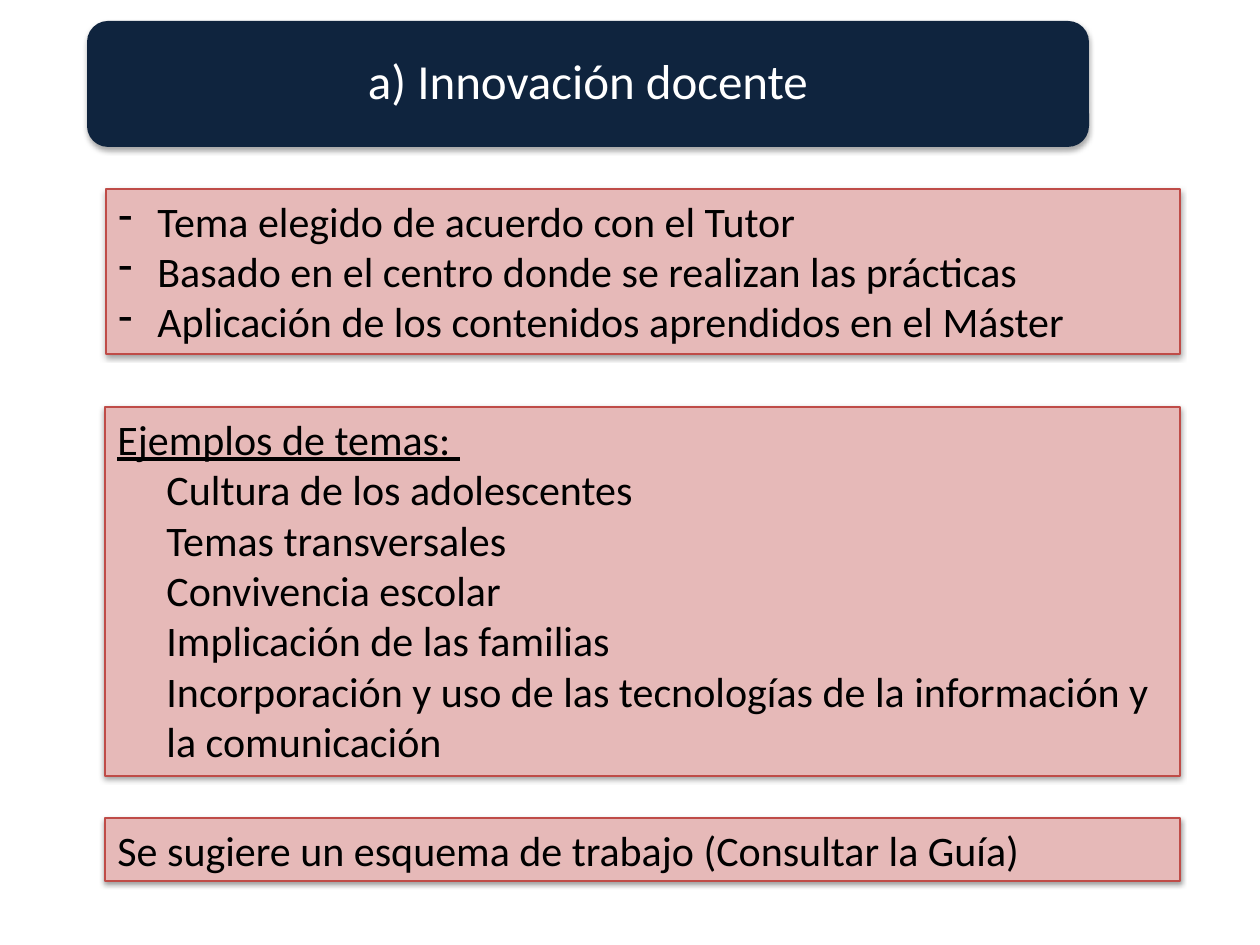
from lxml import etree
from pptx import Presentation
from pptx.dml.color import RGBColor
from pptx.enum import shapes, text
from pptx.oxml import ns
from pptx.util import Pt

SCALE = 914400 / 126
COLORS = {"navy": "0F243E", "pink": "E6B9B8", "red": "BF4C48",
          "black": "000000", "white": "FFFFFF"}


def add_panel(kind, left, top, width, height, fill, shadow_alpha, shadow_distance):
    box = page.shapes.add_shape(kind, *(round(side * SCALE) for side in (left, top, width, height)))
    box.fill.solid()
    box.fill.fore_color.rgb = RGBColor.from_string(COLORS[fill])
    box.shadow.inherit = False
    effects = box._element.spPr.find(ns.qn("a:effectLst"))
    shadow = etree.SubElement(effects, ns.qn("a:outerShdw"), blurRad="40000",
                              dist=str(shadow_distance), dir="5400000", rotWithShape="0")
    color = etree.SubElement(shadow, ns.qn("a:srgbClr"), val=COLORS["black"])
    etree.SubElement(color, ns.qn("a:alpha"), val=str(shadow_alpha * 1000))
    box.text_frame.word_wrap = True
    return box


def add_span(para, words, size, color):
    span = para.add_run()
    span.text = words
    span.font.name = "Calibri"
    span.font.size = Pt(size)
    span.font.color.rgb = RGBColor.from_string(COLORS[color])
    return span


deck = Presentation()
deck.slide_width = round(1260 * SCALE)
deck.slide_height = round(945 * SCALE)
page = deck.slides.add_slide(deck.slide_layouts[6])

panels = [
    (106, 189, 1074, 165, [
        ("Tema elegido de acuerdo con el Tutor", "dash"),
        ("Basado en el centro donde se realizan las prácticas", "dash"),
        ("Aplicación de los contenidos aprendidos en el Máster", "dash"),
    ]),
    (105, 407, 1075, 369, [
        ("Ejemplos de temas: ", "heading"),
        ("Cultura de los adolescentes", "indent"),
        ("Temas transversales", "indent"),
        ("Convivencia escolar", "indent"),
        ("Implicación de las familias", "indent"),
        ("Incorporación y uso de las tecnologías de la información y la comunicación", "indent"),
    ]),
    (105, 818, 1075, 63, [
        ("Se sugiere un esquema de trabajo (Consultar la Guía)", "plain"),
    ]),
]

for left, top, width, height, lines in panels:
    box = add_panel(shapes.MSO_SHAPE.RECTANGLE, left, top, width, height, "pink", 38, 20000)
    box.line.color.rgb = RGBColor.from_string(COLORS["red"])
    box.line.width = Pt(0.75)
    frame = box.text_frame
    frame.auto_size = text.MSO_AUTO_SIZE.SHAPE_TO_FIT_TEXT
    frame.vertical_anchor = text.MSO_ANCHOR.TOP
    for index, (words, style) in enumerate(lines):
        para = frame.paragraphs[0] if index == 0 else frame.add_paragraph()
        para.alignment = text.PP_ALIGN.LEFT
        properties = para._p.get_or_add_pPr()
        if style == "dash":
            properties.set("marL", str(round(39 * SCALE)))
            properties.set("indent", str(round(-39 * SCALE)))
            etree.SubElement(properties, ns.qn("a:buChar"), char="-")
        elif style == "indent":
            properties.set("marL", str(round(49 * SCALE)))
        span = add_span(para, words, 24, "black")
        if style == "heading":
            span.font.underline = True

title = add_panel(shapes.MSO_SHAPE.ROUNDED_RECTANGLE, 87, 21, 1002, 126, "navy", 35, 23000)
title.line.fill.background()
title.text_frame.vertical_anchor = text.MSO_ANCHOR.MIDDLE
para = title.text_frame.paragraphs[0]
para.alignment = text.PP_ALIGN.CENTER
para.line_spacing = 0.9
add_span(para, "a) Innovación docente", 28, "white")

deck.save("out.pptx")
